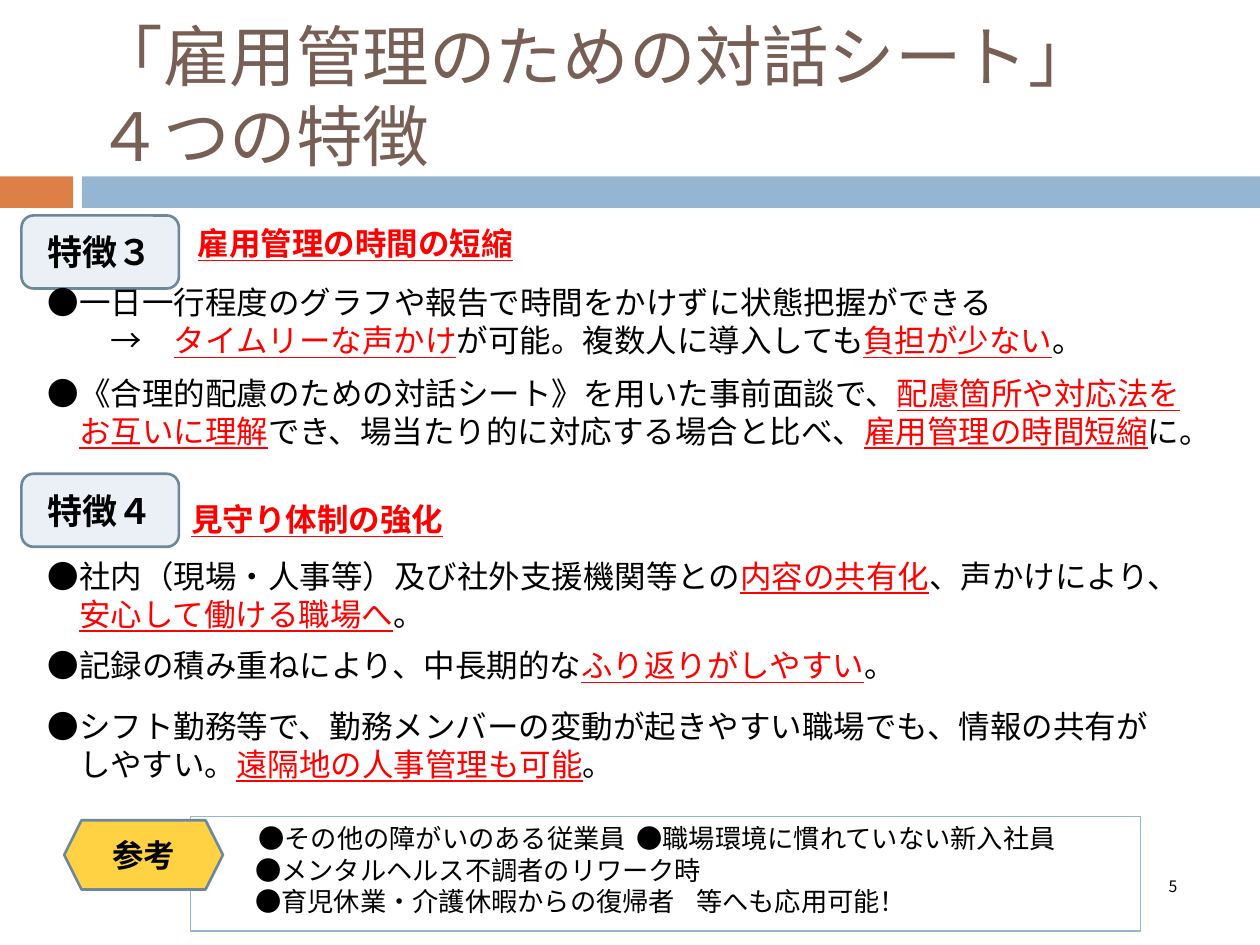
from dataclasses import dataclass
from pptx import Presentation
from pptx.dml.color import RGBColor as Rgb
from pptx.enum.shapes import MSO_SHAPE as Kind
from pptx.enum.text import MSO_ANCHOR as Anchor, PP_ALIGN as Align
from pptx.oxml.ns import qn
from pptx.util import Inches, Pt
from lxml.etree import SubElement


@dataclass(frozen=True)
class Theme:
    font: str = "Noto Sans CJK JP"
    ink: str = "000000"
    red: str = "FF0000"
    brown: str = "775F55"
    orange: str = "DD8047"
    blue: str = "94B6D2"
    pale: str = "EAF0F6"
    gold: str = "FFD243"
    edge: str = "6D879B"
    title: int = 38
    label: int = 20
    body: int = 18
    note: int = 15
    small: int = 9


class Page:
    """One slide on a grid of 100 columns by 75 rows."""

    def __init__(self, deck, theme):
        self.theme = theme
        self.slide = deck.slides.add_slide(deck.slide_layouts[6])
        self.cell = deck.slide_width / 100

    def place(self, spot):
        return [round(n * self.cell) for n in spot]

    def shape(self, kind, spot, fill=None, line=None, width=1.5):
        item = self.slide.shapes.add_shape(kind, *self.place(spot))
        item.shadow.inherit = False
        if fill:
            item.fill.solid()
            item.fill.fore_color.rgb = Rgb.from_string(fill)
        else:
            item.fill.background()
        if line:
            item.line.color.rgb = Rgb.from_string(line)
            item.line.width = Pt(width)
        else:
            item.line.fill.background()
        return item

    def run(self, para, text, size, color, bold=False, under=False):
        run = para.add_run()
        run.text = text
        font = run.font
        font.name, font.size, font.bold = self.theme.font, Pt(size), bold
        font.underline = under
        font.color.rgb = Rgb.from_string(color)
        SubElement(font._element, qn("a:ea"), typeface=self.theme.font)

    def label(self, item, lines, size, color=None, bold=False, align=Align.LEFT,
              anchor=Anchor.TOP):
        """Lines are (indent in characters, tab in characters, text); |text| is stressed."""
        frame = item.text_frame
        frame.word_wrap = True
        frame.vertical_anchor = anchor
        for i, (indent, tab, text) in enumerate(lines):
            para = frame.paragraphs[0] if i == 0 else frame.add_paragraph()
            para.alignment = align
            if indent:
                props = para._p.get_or_add_pPr()
                props.set("marL", str(Pt(indent * size)))
                props.set("indent", "0")
                if tab:
                    stops = SubElement(props, qn("a:tabLst"))
                    SubElement(stops, qn("a:tab"), pos=str(Pt(tab * size)), algn="l")
            for j, part in enumerate(text.split("|")):
                if part:
                    hot = j % 2 == 1
                    self.run(para, part, size, self.theme.red if hot else color or self.theme.ink,
                             bold, hot)

    def text(self, spot, lines, size, **style):
        item = self.slide.shapes.add_textbox(*self.place(spot))
        self.label(item, lines, size, **style)

    def badge(self, kind, spot, fill, text, size):
        item = self.shape(kind, spot, fill, self.theme.edge)
        self.label(item, [(0, 0, text)], size, bold=True, align=Align.CENTER,
                   anchor=Anchor.MIDDLE)


def main():
    deck = Presentation()
    deck.slide_width, deck.slide_height = Inches(10), Inches(7.5)
    look = Theme()
    page = Page(deck, look)

    page.shape(Kind.RECTANGLE, (0, 14, 5.8, 2.5), look.orange)
    page.shape(Kind.RECTANGLE, (6.5, 14, 93.5, 2.5), look.blue)
    page.text((6.7, 2.1, 89.2, 10.8), [(0, 0, "「雇用管理のための対話シート」　４つの特徴")],
              look.title, color=look.brown, anchor=Anchor.MIDDLE)
    page.text((90.2, 69, 5.8, 2.7), [(0, 0, "5")], look.small,
              align=Align.CENTER, anchor=Anchor.MIDDLE)

    heads = [
        (17.1, "特徴３", (14.7, 17.3, 85.3, 4), "|雇用管理の時間の短縮|"),
        (37.6, "特徴４", (14.2, 39.2, 59.7, 4), "|見守り体制の強化|"),
    ]
    for row, name, spot, head in heads:
        page.badge(Kind.ROUNDED_RECTANGLE, (1.7, row, 12.5, 5.8), look.pale, name, look.label)
        page.text(spot, [(0, 0, head)], look.body, bold=True)

    points = [
        (22, 97.2, [(0, 0, "●一日一行程度のグラフや報告で時間をかけずに状態把握ができる"),
                    (2, 0, "→　|タイムリーな声かけ|が可能。複数人に導入しても|負担が少ない|。")]),
        (29.2, 95, [(0, 0, "●《合理的配慮のための対話シート》を用いた事前面談で、|配慮箇所や対応法を|"),
                    (1, 0, "|お互いに理解|でき、場当たり的に対応する場合と比べ、|雇用管理の時間短縮|に。")]),
        (43.7, 98.4, [(0, 0, "●社内（現場・人事等）及び社外支援機関等との|内容の共有化|、声かけにより、"),
                      (1, 0, "|安心して働ける職場へ|。")]),
        (50.8, 95, [(0, 0, "●記録の積み重ねにより、中長期的な|ふり返りがしやすい|。")]),
        (55.6, 95, [(0, 0, "●シフト勤務等で、勤務メンバーの変動が起きやすい職場でも、情報の共有が"),
                    (1, 0, "しやすい。|遠隔地の人事管理も可能|。")]),
    ]
    for row, wide, lines in points:
        tall = 1 + 3.05 * len(lines)
        page.text((2.8, row, wide, tall), lines, look.body)

    note = page.shape(Kind.RECTANGLE, (15.1, 64.8, 75.4, 9.1), line=look.blue, width=0.75)
    page.label(note, [(2.13, 18.13, "●その他の障がいのある従業員\t●職場環境に慣れていない新入社員"),
                      (2, 0, "●メンタルヘルス不調者のリワーク時"),
                      (2, 21, "●育児休業・介護休暇からの復帰者\t等へも応用可能！")], look.note)
    page.badge(Kind.HEXAGON, (5.1, 65.1, 12.6, 5.5), look.gold, "参考", look.body)
    deck.save("out.pptx")


if __name__ == "__main__":
    main()
